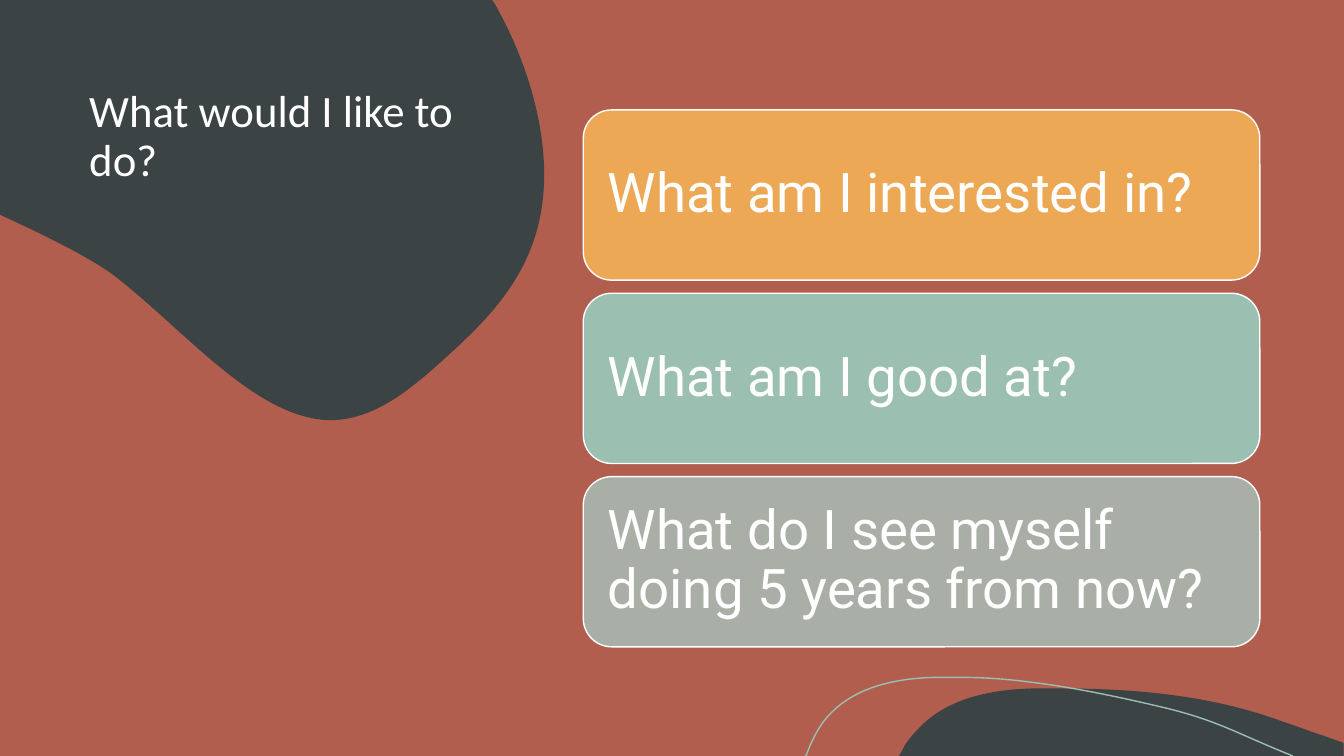
from dataclasses import dataclass

from lxml.etree import SubElement
from pptx import Presentation
from pptx.dml.color import RGBColor
from pptx.enum.shapes import MSO_SHAPE
from pptx.enum.text import MSO_ANCHOR, PP_ALIGN
from pptx.oxml.ns import qn
from pptx.util import Cm, Pt


@dataclass(frozen=True)
class Theme:
    """Colours, fonts and type sizes of the slide."""
    clay: str = "B15E4E"
    slate: str = "3B4345"
    amber: str = "ECA855"
    mint: str = "9BBFB0"
    stone: str = "A9AEA7"
    white: str = "FFFFFF"
    title_font: str = "Calibri"
    card_font: str = "Roboto"
    title_size: int = 32
    card_size: int = 39
    line_width: int = 1
    line_spacing: float = 0.9


@dataclass(frozen=True)
class Box:
    """A region of the slide in centimetres."""
    left: float
    top: float
    width: float
    height: float

    def emu(self):
        """Return left, top, width and height as lengths."""
        return Cm(self.left), Cm(self.top), Cm(self.width), Cm(self.height)


THEME = Theme()

TITLE_BLOB = [
    [(0, 0)],
    [(12.4, 0)],
    [(12.47, 0.1)],
    [(13.28, 1.52), (13.84, 3.33), (13.69, 4.93)],
    [(13.51, 6.86), (12.34, 8), (11.28, 8.97)],
    [(10.39, 9.78), (9.45, 10.59), (8.31, 10.59)],
    [(6.4, 10.54), (4.62, 8.26), (2.79, 6.88)],
    [(2.24, 6.5), (1.55, 6.15), (0.81, 5.79)],
    [(0, 5.41)],
]
CORNER_HILL = [
    [(4.11, 0)],
    [(5.99, 0), (7.92, 0.18), (9.68, 0.84)],
    [(10.01, 0.94), (10.31, 1.07), (10.64, 1.17)],
    [(11.2, 1.37)],
    [(11.2, 1.7)],
    [(0, 1.7)],
    [(0.15, 1.42)],
    [(0.25, 1.27), (0.36, 1.14), (0.48, 1.02)],
    [(1.19, 0.25), (2.29, 0.03), (3.33, 0)],
    [(3.58, 0), (3.84, 0), (4.11, 0)],
]
CORNER_WAVE = [
    [(0, 1.98)],
    [(0.03, 1.96)],
    [(0.18, 1.55), (0.38, 1.17), (0.64, 0.91)],
    [(1.3, 0.23), (2.29, 0.03), (3.23, 0)],
    [(3.96, 0)],
    [(5.66, 0), (7.65, 0.43), (9.04, 0.76)],
    [(10.41, 1.09), (10.85, 1.4), (12.29, 1.98)],
]
QUESTIONS = [
    ("What am I interested in?", THEME.amber),
    ("What am I good at?", THEME.mint),
    ("What do I see myself doing 5 years from now?", THEME.stone),
]


def color(value):
    """Turn a hex string into a colour."""
    return RGBColor.from_string(value)


def paint(shape, fill=None, line=None):
    """Set fill and outline, leaving out whichever is not given."""
    shape.shadow.inherit = False
    if fill:
        shape.fill.solid()
        shape.fill.fore_color.rgb = color(fill)
    else:
        shape.fill.background()
    if line:
        shape.line.color.rgb = color(line)
        shape.line.width = Pt(THEME.line_width)
    else:
        shape.line.fill.background()


def bend(step, controls):
    """Turn a straight step of an outline into a cubic curve."""
    step.tag = qn("a:cubicBezTo")
    step.clear()
    for x, y in controls:
        SubElement(step, qn("a:pt"), x=str(x), y=str(y))


def add_outline(slide, box, segments, fill=None, line=None):
    """Draw an outline placed relative to its box, closed when filled."""
    placed = [[(Cm(box.left + x), Cm(box.top + y)) for x, y in segment]
              for segment in segments]
    corners = [segment[-1] for segment in placed]
    builder = slide.shapes.build_freeform(*corners[0])
    builder.add_line_segments(corners[1:], close=fill is not None)
    shape = builder.convert_to_shape()
    steps = list(shape.element.iter(qn("a:lnTo")))
    for step, segment in zip(steps, placed[1:]):
        if len(segment) == 3:
            bend(step, [(x - shape.left, y - shape.top) for x, y in segment])
    paint(shape, fill, line)


def write(frame, text, font, size):
    """Write one left-aligned white paragraph."""
    frame.word_wrap = True
    paragraph = frame.paragraphs[0]
    paragraph.text = text
    paragraph.alignment = PP_ALIGN.LEFT
    paragraph.line_spacing = THEME.line_spacing
    paragraph.font.name = font
    paragraph.font.size = Pt(size)
    paragraph.font.color.rgb = color(THEME.white)


def add_backdrop(slide, box):
    """Cover the box with the ground colour."""
    backdrop = slide.shapes.add_shape(MSO_SHAPE.RECTANGLE, *box.emu())
    paint(backdrop, THEME.clay)


def add_title(slide, box):
    """Place the dark blob and the title on it."""
    add_outline(slide, box, TITLE_BLOB, fill=THEME.slate)
    text_box = Box(box.left + 2, box.top + 2.12, 10.7, 6.35)
    frame = slide.shapes.add_textbox(*text_box.emu()).text_frame
    write(frame, "What would I like to do?", THEME.title_font, THEME.title_size)


def add_corner(slide, box):
    """Place the hill and the thin wave in the lower corner."""
    hill = Box(box.left + 2.37, box.top + 0.28, 11.2, 1.7)
    add_outline(slide, hill, CORNER_HILL, fill=THEME.slate)
    add_outline(slide, box, CORNER_WAVE, line=THEME.mint)


def add_questions(slide, box, gap=0.33):
    """Stack the question cards evenly in the box."""
    height = (box.height - gap * (len(QUESTIONS) - 1)) / len(QUESTIONS)
    for index, (question, fill) in enumerate(QUESTIONS):
        card_box = Box(box.left, box.top + index * (height + gap), box.width, height)
        card = slide.shapes.add_shape(MSO_SHAPE.ROUNDED_RECTANGLE, *card_box.emu())
        paint(card, fill, THEME.white)
        frame = card.text_frame
        frame.margin_left = frame.margin_right = Cm(0.41)
        frame.margin_top = frame.margin_bottom = Cm(0.41)
        frame.vertical_anchor = MSO_ANCHOR.MIDDLE
        write(frame, question, THEME.card_font, THEME.card_size)


def main():
    """Build the deck and save it."""
    deck = Presentation()
    deck.slide_width, deck.slide_height = Cm(33.87), Cm(19.05)
    slide = deck.slides.add_slide(deck.slide_layouts[6])
    slide.background.fill.solid()
    slide.background.fill.fore_color.rgb = color(THEME.clay)
    add_backdrop(slide, Box(0, 0, 33.87, 19.05))
    add_title(slide, Box(0, 0, 13.72, 10.59))
    add_corner(slide, Box(20.29, 17.07, 13.58, 1.98))
    add_questions(slide, Box(14.7, 2.77, 17.05, 13.53))
    deck.save("out.pptx")


if __name__ == "__main__":
    main()
